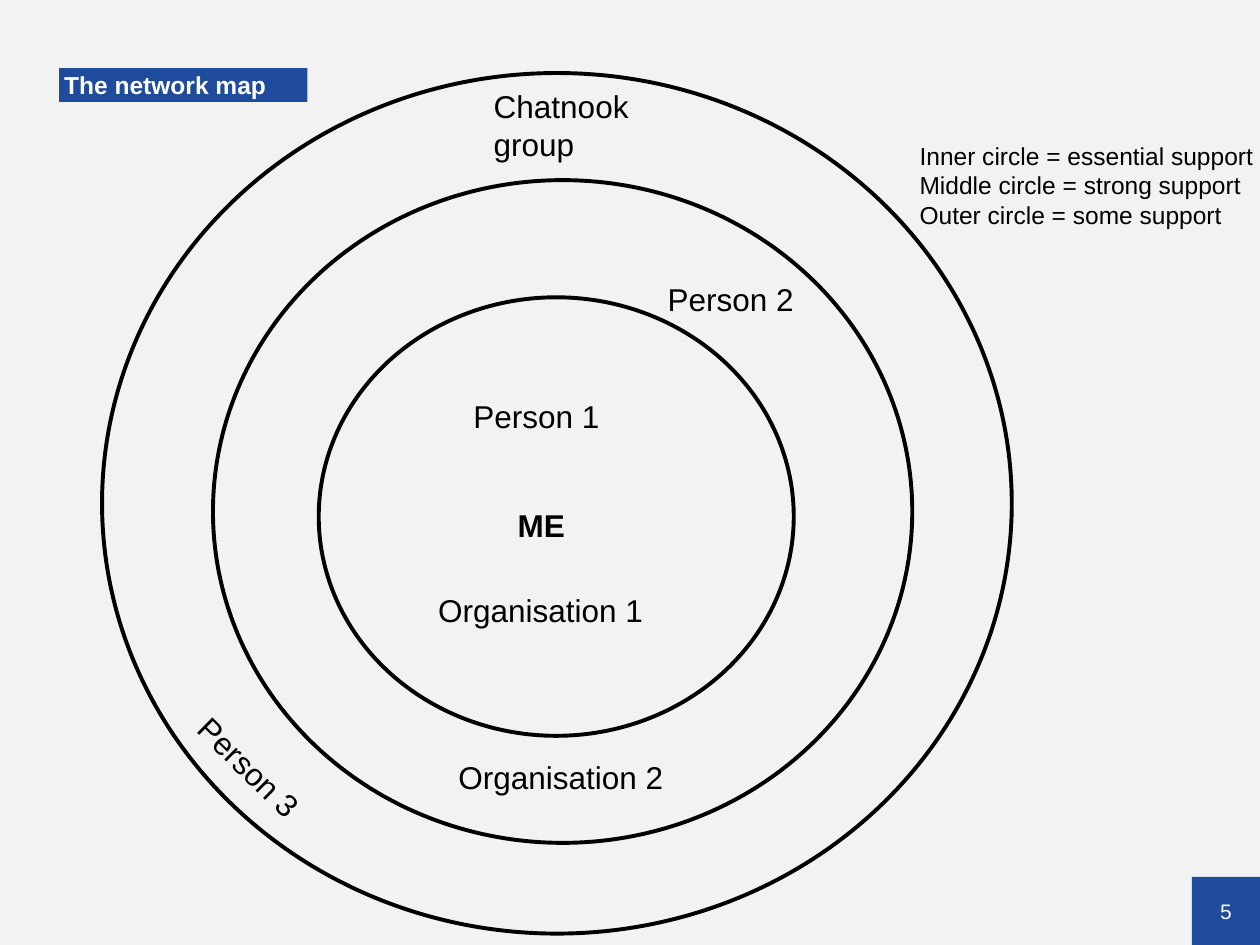
from pptx import Presentation
from pptx.dml.color import RGBColor
from pptx.enum.shapes import MSO_SHAPE as Shape
from pptx.enum.text import MSO_ANCHOR as Anchor, MSO_AUTO_SIZE as AutoSize, PP_ALIGN as Align
from pptx.util import Inches, Pt

COLOURS = {"background": "F2F2F2", "accent": "1E4B9B", "ink": "000000", "light": "FFFFFF"}
FONT = "Arial"

BANNERS = [
    ("5", (9.46, 6.96, 0.54, 0.54), 12, False, Align.CENTER, 1, (0, 0)),
    ("The network map", (0.47, 0.54, 1.97, 0.27), 14, True, Align.LEFT, 0.9, (0.04, 0.02)),
]
CIRCLES = {
    "outer": (0.81, 0.58, 7.22, 6.83),
    "middle": (1.69, 1.43, 5.55, 5.26),
    "inner": (2.53, 2.36, 3.77, 3.48),
}
CONTACTS = [
    ("ME", (4.01, 3.97, 0.74, 0.4), True, 0),
    ("Person 1", (3.66, 3.1, 1.34, 0.4), False, 0),
    ("Person 2", (5.2, 2.17, 1.5, 0.4), False, 0),
    ("Organisation 1", (3.38, 4.64, 2, 0.4), False, 0),
    ("Chatnook group", (3.82, 0.64, 1.75, 0.71), False, 0),
    ("Person 3", (1.37, 5.91, 1.26, 0.4), False, 44.6),
    ("Organisation 2", (3.54, 5.97, 2.04, 0.4), False, 0),
]
LEGEND = [
    "Inner circle = essential support",
    "Middle circle = strong support",
    "Outer circle = some support",
]
LEGEND_BOX = (7.2, 1.07, 3.24, 0.81)


def colour(name):
    return RGBColor.from_string(COLOURS[name])


def write(frame, lines, size, ink="ink", bold=False):
    frame.word_wrap = True
    frame.text = "\n".join(lines)
    for paragraph in frame.paragraphs:
        font = paragraph.font
        font.name, font.size, font.bold = FONT, Pt(size), bold
        font.color.rgb = colour(ink)


def add_banner(slide, wording, box, size, bold, align, spacing, insets):
    banner = slide.shapes.add_shape(Shape.RECTANGLE, *map(Inches, box))
    banner.shadow.inherit = False
    banner.fill.solid()
    banner.fill.fore_color.rgb = colour("accent")
    banner.line.fill.background()
    frame = banner.text_frame
    write(frame, [wording], size, "light", bold)
    frame.vertical_anchor = Anchor.MIDDLE
    frame.margin_left, frame.margin_top = map(Inches, insets)
    frame.margin_right = frame.margin_bottom = 0
    frame.paragraphs[0].alignment = align
    frame.paragraphs[0].line_spacing = spacing


def add_circle(slide, box):
    circle = slide.shapes.add_shape(Shape.OVAL, *map(Inches, box))
    circle.shadow.inherit = False
    circle.fill.background()
    circle.line.color.rgb = colour("ink")
    circle.line.width = Pt(2.25)


def add_label(slide, lines, box, size, bold=False, rotation=0):
    label = slide.shapes.add_textbox(*map(Inches, box))
    label.rotation = rotation
    write(label.text_frame, lines, size, bold=bold)
    label.text_frame.auto_size = AutoSize.SHAPE_TO_FIT_TEXT


def main():
    """Build the network map slide."""
    deck = Presentation()
    deck.slide_width, deck.slide_height = Inches(10), Inches(7.5)
    slide = deck.slides.add_slide(deck.slide_layouts[6])
    slide.background.fill.solid()
    slide.background.fill.fore_color.rgb = colour("background")
    for banner in BANNERS:
        add_banner(slide, *banner)
    for box in CIRCLES.values():
        add_circle(slide, box)
    for wording, box, bold, rotation in CONTACTS:
        add_label(slide, [wording], box, 18, bold, rotation)
    add_label(slide, LEGEND, LEGEND_BOX, 14)
    deck.save("out.pptx")


if __name__ == "__main__":
    main()
